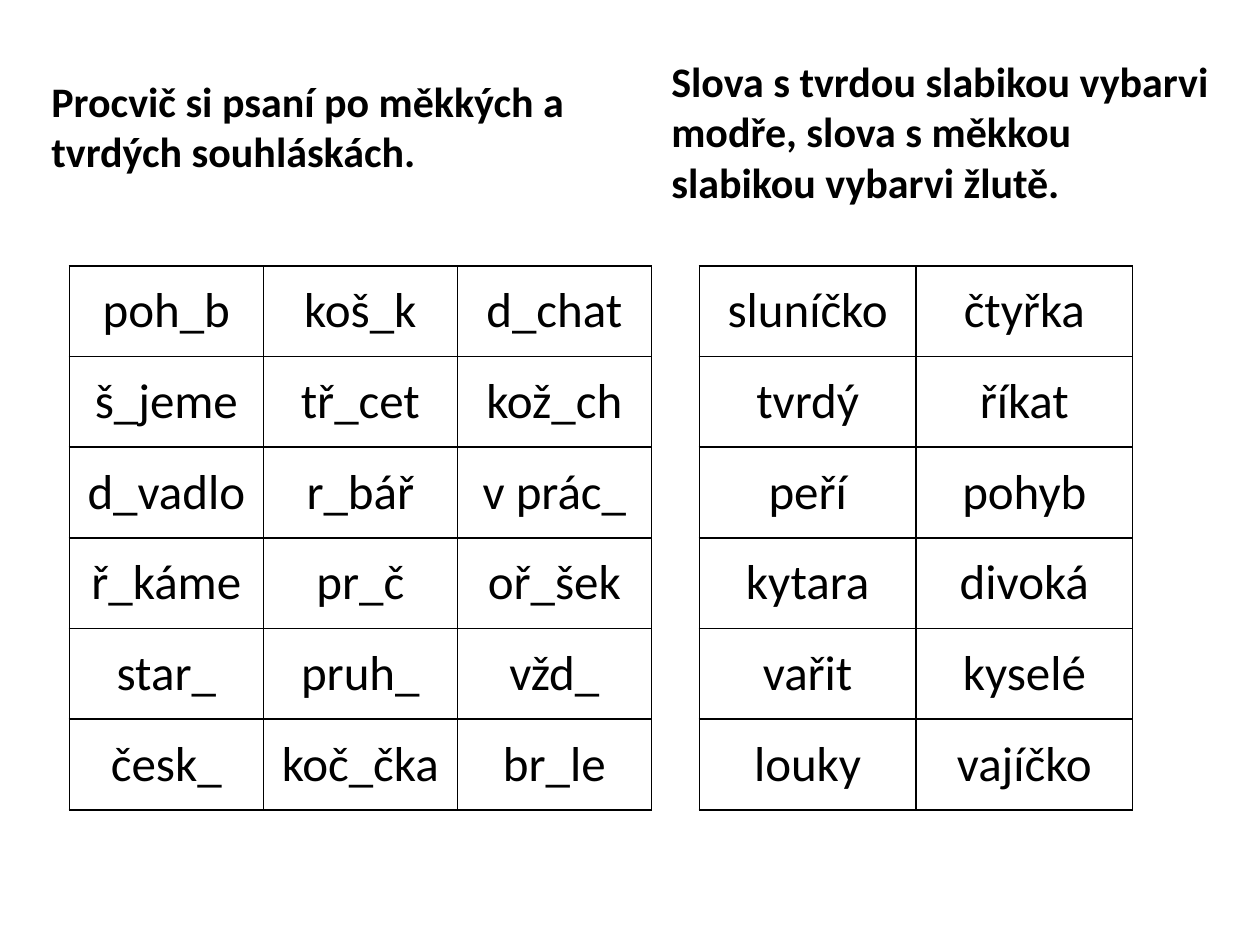
from dataclasses import dataclass

from lxml import etree
from pptx import Presentation
from pptx import util as u
from pptx.dml.color import RGBColor
from pptx.enum import text
from pptx.oxml import ns


@dataclass(frozen=True)
class Theme:
    font: str = "Calibri"
    ink: str = "000000"
    heading: int = 24
    word: int = 28
    border: int = 1


theme = Theme()
PX = u.Inches(1) // 100
ROW_HEIGHT = 72
TABLE_TOP = 211


def style(paragraph, size, bold=False):
    paragraph.font.name = theme.font
    paragraph.font.size = u.Pt(size)
    paragraph.font.bold = bold
    paragraph.font.color.rgb = RGBColor.from_string(theme.ink)


def add_borders(cell):
    properties = cell._tc.get_or_add_tcPr()
    for position, side in enumerate(("lnL", "lnR", "lnT", "lnB")):
        line = etree.Element(ns.qn(f"a:{side}"), w=str(u.Pt(theme.border)))
        fill = etree.SubElement(line, ns.qn("a:solidFill"))
        etree.SubElement(fill, ns.qn("a:srgbClr"), val=theme.ink)
        properties.insert(position, line)


presentation = Presentation()
presentation.slide_width = 1000 * PX
presentation.slide_height = 750 * PX
slide = presentation.slides.add_slide(presentation.slide_layouts[6])

gap_words = [
    ["poh_b", "koš_k", "d_chat"],
    ["š_jeme", "tř_cet", "kož_ch"],
    ["d_vadlo", "r_bář", "v prác_"],
    ["ř_káme", "pr_č", "oř_šek"],
    ["star_", "pruh_", "vžd_"],
    ["česk_", "koč_čka", "br_le"],
]
colouring_words = [
    ["sluníčko", "čtyřka"],
    ["tvrdý", "říkat"],
    ["peří", "pohyb"],
    ["kytara", "divoká"],
    ["vařit", "kyselé"],
    ["louky", "vajíčko"],
]

for left, column_width, words in ((55, 154, gap_words), (555, 172, colouring_words)):
    rows, columns = len(words), len(words[0])
    table = slide.shapes.add_table(
        rows, columns, left * PX, TABLE_TOP * PX,
        columns * column_width * PX, rows * ROW_HEIGHT * PX,
    ).table
    table.first_row = False
    table.horz_banding = False
    for column in table.columns:
        column.width = column_width * PX
    for row, row_words in zip(table.rows, words):
        row.height = ROW_HEIGHT * PX
        for cell, word in zip(row.cells, row_words):
            cell.text = word
            cell.vertical_anchor = text.MSO_ANCHOR.MIDDLE
            cell.fill.background()
            add_borders(cell)
            paragraph = cell.text_frame.paragraphs[0]
            paragraph.alignment = text.PP_ALIGN.CENTER
            style(paragraph, theme.word)

headings = [
    (31, 55, 477, 91, "Procvič si psaní po měkkých a tvrdých souhláskách."),
    (523, 39, 453, 131,
     "Slova s tvrdou slabikou vybarvi modře, slova s měkkou slabikou vybarvi žlutě."),
]
for left, top, width, height, wording in headings:
    shape = slide.shapes.add_textbox(left * PX, top * PX, width * PX, height * PX)
    frame = shape.text_frame
    frame.word_wrap = True
    frame.auto_size = text.MSO_AUTO_SIZE.SHAPE_TO_FIT_TEXT
    frame.text = wording
    style(frame.paragraphs[0], theme.heading, bold=True)

presentation.save("out.pptx")
